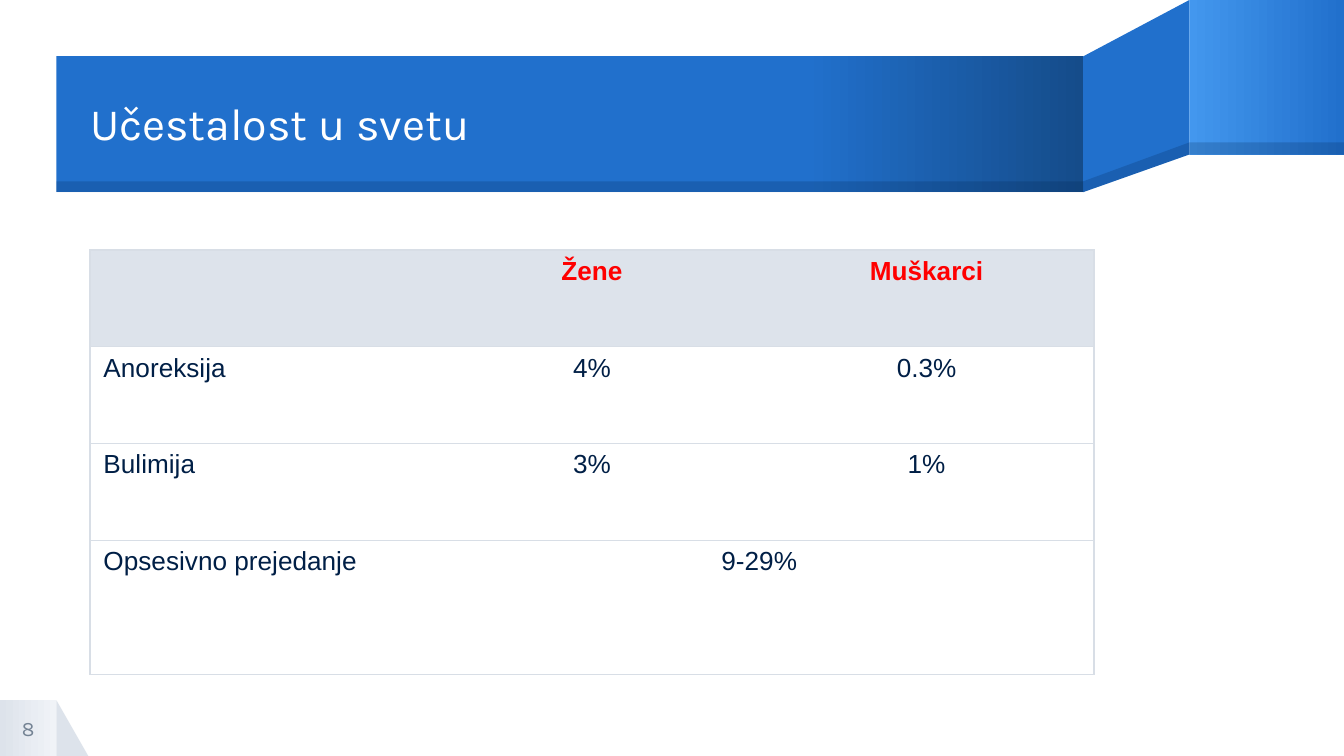
import copy
from dataclasses import dataclass

import lxml.etree
import pptx
import pptx.dml.color
import pptx.enum.shapes
import pptx.enum.text
import pptx.oxml
import pptx.oxml.ns
import pptx.util

Inches = pptx.util.Inches
RGB = pptx.dml.color.RGBColor.from_string
qn = pptx.oxml.ns.qn
Shape = pptx.enum.shapes.MSO_SHAPE
Align = pptx.enum.text.PP_ALIGN


@dataclass(frozen=True)
class Theme:
    blue: str = "2170CC"
    light_blue: str = "4397EE"
    deep_blue: str = "154C8A"
    navy: str = "001F46"
    pale: str = "DDE3EB"
    paler: str = "F0F3F7"
    rule: str = "D8DEE6"
    red: str = "FF0000"
    white: str = "FFFFFF"
    gray: str = "748394"
    heading_font: str = "Karla"
    table_font: str = "Arial"
    title_size: int = 24
    table_size: int = 14
    number_size: int = 11


theme = Theme()


def paint(shape, stops, alpha=100):
    shape.shadow.inherit = False
    shape.line.fill.background()
    if len(stops) == 1:
        shape.fill.solid()
        shape.fill.fore_color.rgb = RGB(stops[0][1])
        if alpha < 100:
            color = shape.fill._xPr.find(".//" + qn("a:srgbClr"))
            lxml.etree.SubElement(color, qn("a:alpha")).set("val", str(alpha * 1000))
        return
    shape.fill.gradient()
    shape.fill.gradient_angle = 0
    stop_list = shape.fill._xPr.find(".//" + qn("a:gsLst"))
    while len(stop_list) < len(stops):
        stop_list.append(copy.deepcopy(stop_list[-1]))
    for stop, (position, color) in zip(shape.fill.gradient_stops, stops):
        stop.position = position
        stop.color.rgb = RGB(color)


def write(paragraph, text, font, size, color, align=Align.LEFT, bold=False):
    paragraph.alignment = align
    run = paragraph.add_run()
    run.text = text
    run.font.name = font
    run.font.size = pptx.util.Pt(size)
    run.font.bold = bold
    run.font.color.rgb = RGB(color)


deck = pptx.Presentation()
deck.slide_width = Inches(10)
deck.slide_height = deck.slide_width * 9 // 16
slide = deck.slides.add_slide(deck.slide_layouts[6])
shapes = slide.shapes

solid_blue = [(0, theme.blue)]
shade = [(0, theme.navy)]
ribbon_parts = [
    (Shape.RIGHT_TRIANGLE, (0.42, 5.21, 0.24, 0.42), [(0, theme.pale)], 100),
    (Shape.RECTANGLE, (0, 5.21, 0.42, 0.42), [(0, theme.pale), (1, theme.paler)], 100),
    (None, [(8.85, 0), (8.06, 0.42), (8.06, 1.43), (8.85, 1.15)], solid_blue, 100),
    (Shape.RECTANGLE, (8.85, 0, 1.15, 1.15), [(0, theme.light_blue), (1, theme.blue)], 100),
    (Shape.RECTANGLE, (0.42, 0.42, 7.64, 1.01),
     [(0, theme.blue), (0.73, theme.blue), (1, theme.deep_blue)], 100),
    (None, [(8.85, 1.06), (8.06, 1.35), (8.06, 1.43), (8.85, 1.15)], shade, 20),
    (Shape.RECTANGLE, (8.85, 1.06, 1.15, 0.09), shade, 20),
    (Shape.RECTANGLE, (0.42, 1.35, 7.64, 0.08), shade, 20),
]
for preset, geometry, stops, alpha in ribbon_parts:
    if preset is None:
        corners = [(Inches(x), Inches(y)) for x, y in geometry]
        fold = shapes.build_freeform(*corners[0])
        fold.add_line_segments(corners[1:], close=True)
        part = fold.convert_to_shape()
    else:
        part = shapes.add_shape(preset, *map(Inches, geometry))
    paint(part, stops, alpha)

captions = [
    ("Učestalost u svetu", (0.67, 0.43, 7.39, 1.01), theme.title_size, theme.white, Align.LEFT, 0.9),
    ("8", (0, 5.21, 0.42, 0.42), theme.number_size, theme.gray, Align.CENTER, 1.0),
]
for text, place, size, color, align, spacing in captions:
    frame = shapes.add_textbox(*map(Inches, place)).text_frame
    frame.word_wrap = True
    frame.vertical_anchor = pptx.enum.text.MSO_ANCHOR.MIDDLE
    frame.margin_left = frame.margin_right = frame.margin_top = frame.margin_bottom = 0
    frame.paragraphs[0].line_spacing = spacing
    write(frame.paragraphs[0], text, theme.heading_font, size, color, align)

frequencies = [
    ("", "Žene", "Muškarci"),
    ("Anoreksija", "4%", "0.3%"),
    ("Bulimija", "3%", "1%"),
    ("Opsesivno prejedanje", "9-29%", ""),
]
row_heights = [0.72, 0.72, 0.72, 1]
table = shapes.add_table(4, 3, Inches(0.67), Inches(1.86), Inches(7.48), Inches(3.15)).table
table.horz_banding = False
table.first_row = False
for column in table.columns:
    column.width = Inches(2.49)
for row, height in zip(table.rows, row_heights):
    row.height = Inches(height)
table.cell(3, 1).merge(table.cell(3, 2))

for r, values in enumerate(frequencies):
    for c, value in enumerate(values):
        cell = table.cell(r, c)
        properties = cell._tc.get_or_add_tcPr()
        edges = {"a:lnL": c == 0, "a:lnR": c == 2 or (r, c) == (3, 1), "a:lnT": True, "a:lnB": True}
        for tag, visible in edges.items():
            edge = lxml.etree.SubElement(properties, qn(tag))
            edge.set("w", str(pptx.util.Pt(0.75)))
            if visible:
                ink = lxml.etree.SubElement(edge, qn("a:solidFill"))
                lxml.etree.SubElement(ink, qn("a:srgbClr")).set("val", theme.rule)
            else:
                lxml.etree.SubElement(edge, qn("a:noFill"))
        if r == 0:
            cell.fill.solid()
            cell.fill.fore_color.rgb = RGB(theme.pale)
        else:
            cell.fill.background()
        if value:
            write(cell.text_frame.paragraphs[0], value, theme.table_font, theme.table_size,
                  theme.red if r == 0 else theme.navy,
                  Align.CENTER if c else Align.LEFT, r == 0)

deck.save("out.pptx")
